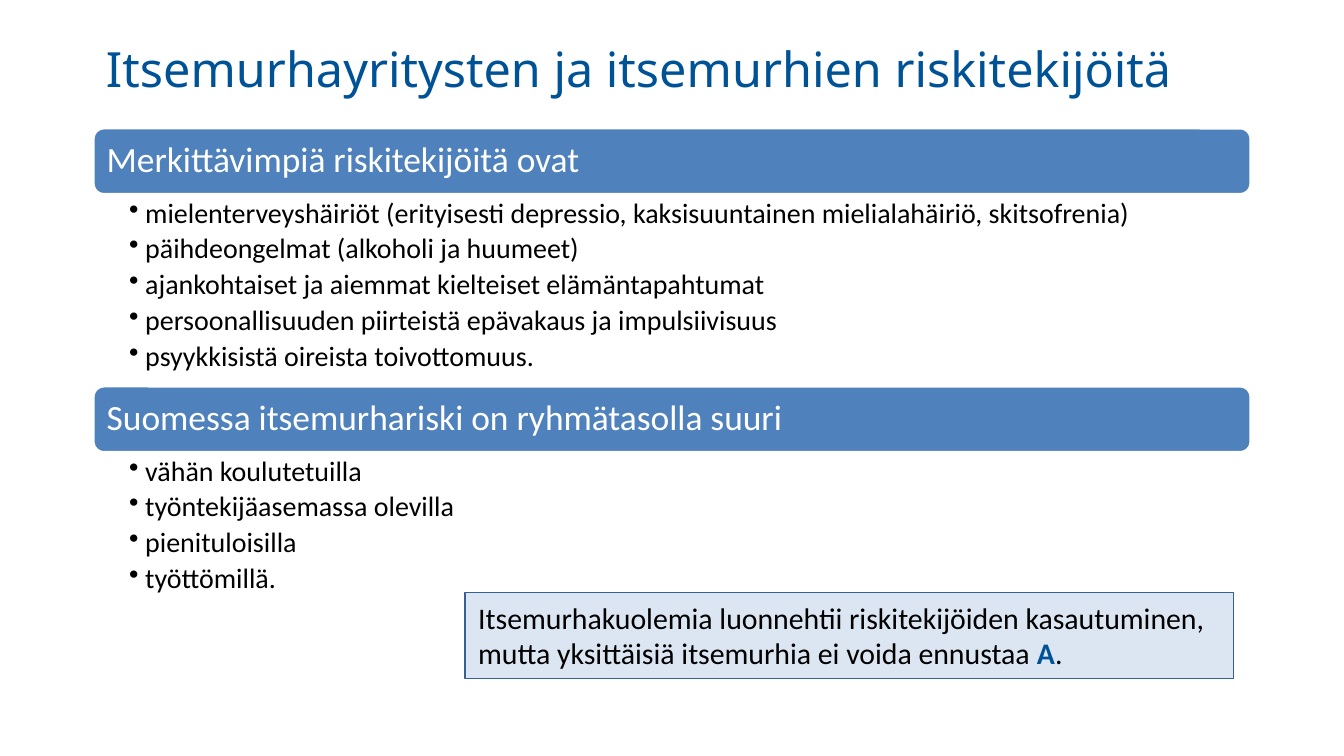
from pptx import Presentation
from pptx.dml.color import RGBColor
from pptx.enum.shapes import MSO_SHAPE as Shape
from pptx.enum.text import MSO_ANCHOR as Anchor, PP_ALIGN as Align
from pptx.oxml.ns import qn
from pptx.util import Inches, Pt
from lxml import etree

NAVY = RGBColor(0x00, 0x52, 0x96)
BLUE = RGBColor(0x4F, 0x81, 0xBD)
PALE = RGBColor(0xDC, 0xE6, 0xF2)
EDGE = RGBColor(0x37, 0x60, 0x92)
WHITE = RGBColor(0xFF, 0xFF, 0xFF)
BLACK = RGBColor(0, 0, 0)

LEFT, WIDTH = 0.69, 8.62
BAR = 0.5

GROUPS = [
    ("Merkittävimpiä riskitekijöitä ovat", 1.42, [
        "mielenterveyshäiriöt (erityisesti depressio, kaksisuuntainen mielialahäiriö, skitsofrenia)",
        "päihdeongelmat (alkoholi ja huumeet)",
        "ajankohtaiset ja aiemmat kielteiset elämäntapahtumat",
        "persoonallisuuden piirteistä epävakaus ja impulsiivisuus",
        "psyykkisistä oireista toivottomuus.",
    ]),
    ("Suomessa itsemurhariski on ryhmätasolla suuri", 1.14, [
        "vähän koulutetuilla",
        "työntekijäasemassa olevilla",
        "pienituloisilla",
        "työttömillä.",
    ]),
]


def write(shape, paras, size, color=BLACK, font="Calibri", anchor=Anchor.TOP,
          inset=(0.1, 0.05, 0.1, 0.05), line=None, after=None, bullet=False):
    """Fill a shape with paragraphs, each a list of (text, bold colour or None)."""
    frame = shape.text_frame
    frame.word_wrap = True
    frame.vertical_anchor = anchor
    (frame.margin_left, frame.margin_top,
     frame.margin_right, frame.margin_bottom) = map(Inches, inset)
    for i, parts in enumerate(paras):
        para = frame.paragraphs[0] if i == 0 else frame.add_paragraph()
        para.alignment = Align.LEFT
        if line:
            para.line_spacing = line
        if after:
            para.space_after = Pt(after)
        if bullet:
            para.level = 1
            props = para._p.get_or_add_pPr()
            props.set("marL", str(Inches(0.12)))
            props.set("indent", str(-Inches(0.12)))
            etree.SubElement(props, qn("a:buChar")).set("char", "•")
        para.font.size = Pt(size)
        para.font.name = font
        for text, mark in parts:
            if text == "\n":
                para.add_line_break()
                continue
            run = para.add_run()
            run.text = text
            run.font.name = font
            run.font.size = Pt(size)
            run.font.bold = mark is not None
            run.font.color.rgb = mark or color


def add_box(slide, kind, box, fill, edge, width):
    shape = slide.shapes.add_shape(kind, *map(Inches, box))
    shape.shadow.inherit = False
    shape.fill.solid()
    shape.fill.fore_color.rgb = fill
    shape.line.color.rgb = edge
    shape.line.width = Pt(width)
    return shape


def add_title(slide, box):
    title = slide.shapes.add_textbox(*map(Inches, box))
    write(title, [[("Itsemurhayritysten ja itsemurhien riskitekijöitä", None)]],
          26, NAVY, "Noto Sans", Anchor.MIDDLE)


def add_group(slide, box, head, items):
    left, top, width, height = box
    # Heading bar
    bar = add_box(slide, Shape.ROUNDED_RECTANGLE, (left, top, width, BAR), BLUE, WHITE, 2)
    write(bar, [[(head, None)]], 19, WHITE, anchor=Anchor.MIDDLE,
          inset=(0.08, 0.08, 0.08, 0.08), line=0.9)
    # Bullet list
    area = left, top + BAR, width, height - BAR
    body = slide.shapes.add_textbox(*map(Inches, area))
    write(body, [[(item, None)] for item in items], 15,
          inset=(0.27, 0.03, 0.15, 0.03), line=0.9, after=3, bullet=True)


def add_note(slide, box):
    note = add_box(slide, Shape.RECTANGLE, box, PALE, EDGE, 0.75)
    write(note, [[
        ("Itsemurhakuolemia luonnehtii riskitekijöiden kasautuminen, ", None),
        ("\n", None),
        ("mutta yksittäisiä itsemurhia ei voida ennustaa ", None),
        ("A", NAVY),
        (".", None),
    ]], 16)


def main():
    deck = Presentation()
    # Widescreen, 16:9
    deck.slide_width = Inches(10)
    deck.slide_height = Inches(10) * 9 // 16
    slide = deck.slides.add_slide(deck.slide_layouts[6])
    add_title(slide, (LEFT, 0.24, WIDTH, 0.54))
    top = 0.95
    for head, depth, items in GROUPS:
        add_group(slide, (LEFT, top, WIDTH, BAR + depth), head, items)
        top += BAR + depth
    add_note(slide, (3.46, 4.41, 5.72, 0.64))
    deck.save("out.pptx")


if __name__ == "__main__":
    main()
